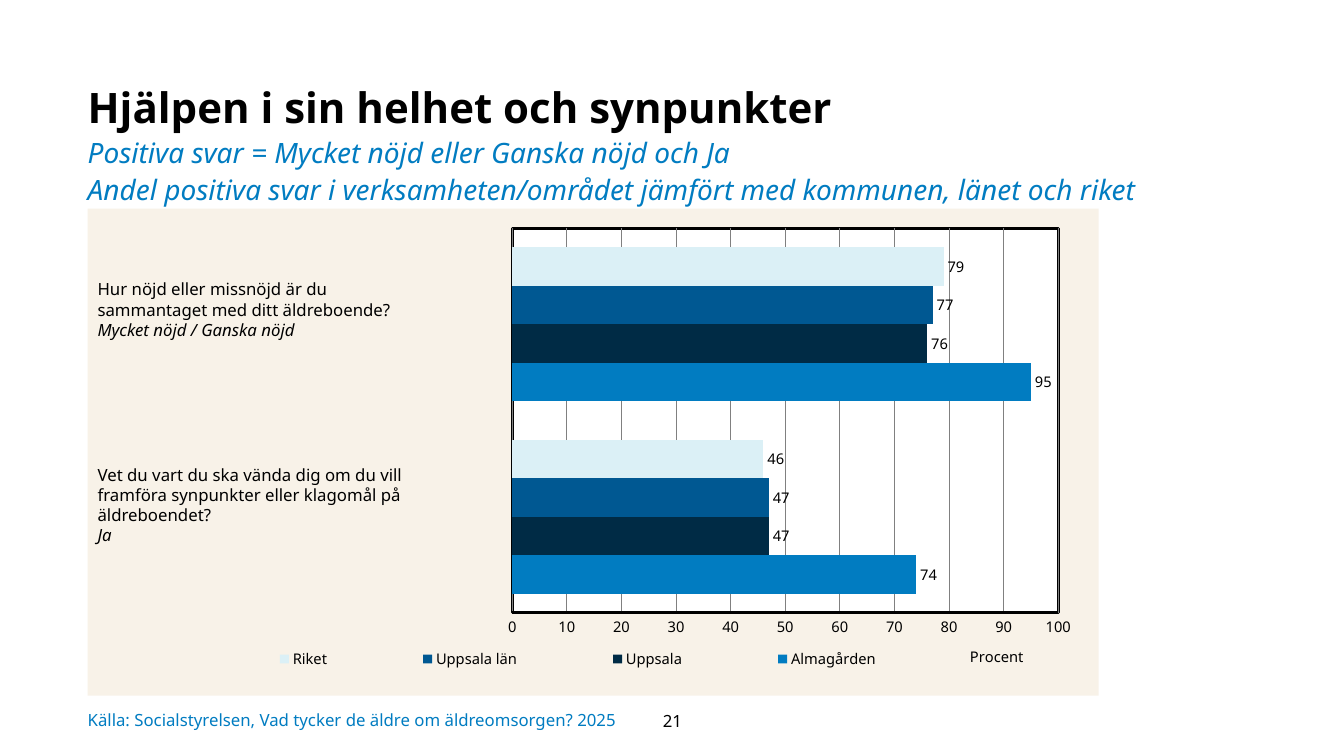
from dataclasses import dataclass

from pptx import Presentation
from pptx.chart.data import CategoryChartData
from pptx.dml.color import RGBColor
from pptx.enum.chart import XL_CHART_TYPE as ChartType
from pptx.enum.chart import XL_LABEL_POSITION as LabelPos
from pptx.enum.chart import XL_LEGEND_POSITION as LegendPos
from pptx.enum.chart import XL_TICK_MARK as TickMark
from pptx.enum.text import MSO_ANCHOR as Anchor
from pptx.enum.text import PP_ALIGN as Align
from pptx.oxml import parse_xml
from pptx.oxml.ns import nsdecls, qn
from pptx.util import Cm, Pt


@dataclass(frozen=True)
class Theme:
    font: str = "Noto Sans"
    ink: str = "000000"
    blue: str = "017CC1"
    navy: str = "002B45"
    mid_blue: str = "005892"
    pale_blue: str = "DBF0F6"
    sand: str = "F8F2E8"
    white: str = "FFFFFF"
    grid: str = "808080"
    heading: float = 30
    subheading: float = 20
    body: float = 12
    small: float = 10.5


THEME = Theme()
MARGIN = 2.21  # left edge shared by all regions, in cm

SERIES = [
    ("Almagården", (74, 95), THEME.blue),
    ("Uppsala", (47, 76), THEME.navy),
    ("Uppsala län", (47, 77), THEME.mid_blue),
    ("Riket", (46, 79), THEME.pale_blue),
]


def style(font, size, color=THEME.ink, bold=False, italic=False):
    font.name = THEME.font
    font.size = Pt(size)
    font.bold = bold
    font.italic = italic
    font.color.rgb = RGBColor.from_string(color)


def add_text(slide, box, lines, anchor=Anchor.TOP, inset=None):
    """Each line is (text, size, color, bold, italic), one paragraph per line."""
    frame = slide.shapes.add_textbox(*map(Cm, box)).text_frame
    frame.word_wrap = True
    frame.vertical_anchor = anchor
    if inset is not None:
        frame.margin_left = frame.margin_top = Cm(inset)
        frame.margin_right = frame.margin_bottom = Cm(inset)
    frame.text = "\n".join(text for text, *_ in lines)
    for paragraph, (_, *look) in zip(frame.paragraphs, lines):
        for run in paragraph.runs:
            style(run.font, *look)
    return frame


# Heading with its two explanatory lines
def add_heading(slide, box):
    sub = (THEME.subheading, THEME.blue, False, True)
    frame = add_text(slide, box, [
        ("Hjälpen i sin helhet och synpunkter", THEME.heading, THEME.ink, True, False),
        ("Positiva svar = Mycket nöjd eller Ganska nöjd och Ja", *sub),
        ("Andel positiva svar i verksamheten/området jämfört med "
         "kommunen, länet och riket", *sub),
    ], inset=0)
    for paragraph in frame.paragraphs:
        paragraph.line_spacing = 1.1


# Chart parts that need XML
def set_layout(parent, x, y, w=None, h=None, inner=False):
    target = '<c:layoutTarget val="inner"/>' if inner else ""
    modes = '<c:xMode val="edge"/><c:yMode val="edge"/>'
    sizes = "".join(f'<c:{tag} val="{value}"/>'
                    for tag, value in zip("xywh", (x, y, w, h)) if value is not None)
    layout = parse_xml(f'<c:layout {nsdecls("c")}><c:manualLayout>{target}{modes}{sizes}'
                       '</c:manualLayout></c:layout>')
    old = parent.find(qn("c:layout"))
    if old is not None:
        parent.remove(old)
    overlay = parent.find(qn("c:overlay"))
    if overlay is None:
        parent.insert(0, layout)
    else:
        overlay.addprevious(layout)


def area_fill(color, line):
    return parse_xml(f'<c:spPr {nsdecls("c", "a")}><a:solidFill><a:srgbClr val="{color}"/>'
                     f'</a:solidFill>{line}</c:spPr>')


def style_value_axis(axis):
    axis.minimum_scale, axis.maximum_scale, axis.major_unit = 0, 100, 10
    axis.major_tick_mark = axis.minor_tick_mark = TickMark.NONE
    axis.format.line.color.rgb = RGBColor.from_string(THEME.ink)
    axis.format.line.width = Pt(2)
    axis.major_gridlines.format.line.color.rgb = RGBColor.from_string(THEME.grid)
    axis.major_gridlines.format.line.width = Pt(0.75)
    style(axis.tick_labels.font, THEME.small)
    caption = axis.axis_title.text_frame
    caption.text = "Procent"
    style(caption.paragraphs[0].runs[0].font, THEME.small)
    set_layout(axis.axis_title._element, 0.87, 0.89)


def add_share_chart(slide, box):
    data = CategoryChartData()
    data.categories = ["1", "2"]
    for name, values, _ in SERIES:
        data.add_series(name, values)
    chart = slide.shapes.add_chart(ChartType.BAR_CLUSTERED, *map(Cm, box), data).chart
    style(chart.font, THEME.small)
    chart.has_title = False

    # Bars and value labels
    bars = chart.plots[0]
    bars.gap_width, bars.overlap, bars.vary_by_categories = 100, 0, False
    for series, (_, _, color) in zip(bars.series, SERIES):
        series.format.fill.solid()
        series.format.fill.fore_color.rgb = RGBColor.from_string(color)
        labels = series.data_labels
        labels.show_value = True
        labels.position = LabelPos.OUTSIDE_END
        style(labels.font, THEME.small)

    # Axes and legend
    chart.category_axis.visible = False
    style_value_axis(chart.value_axis)
    chart.has_legend = True
    legend = chart.legend
    legend.position = LegendPos.BOTTOM
    legend.include_in_layout = False
    style(legend.font, THEME.small)
    set_layout(legend._element, 0.1, 0.89, 0.77, 0.07)

    # Plot frame and backgrounds
    root = chart._chartSpace
    plot_area = root.chart.plotArea
    set_layout(plot_area, 0.42, 0.04, 0.54, 0.79, inner=True)
    plot_area.append(area_fill(
        THEME.white, f'<a:ln w="{Pt(2)}"><a:solidFill><a:srgbClr val="{THEME.ink}"/>'
                     '</a:solidFill></a:ln>'))
    root.chart.addnext(area_fill(THEME.sand, "<a:ln><a:noFill/></a:ln>"))


# Question beside its group of bars, with the positive answers in italics
def add_question(slide, box, lines, answer):
    look = (THEME.body, THEME.ink, False)
    add_text(slide, box, [(line, *look, False) for line in lines] + [(answer, *look, True)])


# Source line and page number
def add_footer(slide, box):
    left, top, width, height = box
    add_text(slide, box, [
        ("Källa: Socialstyrelsen, Vad tycker de äldre om äldreomsorgen? 2025",
         THEME.body, THEME.blue)], Anchor.MIDDLE, inset=0)
    number = add_text(slide, (left + width - 1.57, top - 0.13, 2.59, height + 0.28),
                      [("21", THEME.body)], Anchor.MIDDLE)
    number.paragraphs[0].alignment = Align.CENTER


def main():
    deck = Presentation()
    deck.slide_width, deck.slide_height = Cm(33.87), Cm(19.05)
    slide = deck.slides.add_slide(deck.slide_layouts[6])
    add_heading(slide, (MARGIN, 1.93, 27, 3))
    add_share_chart(slide, (MARGIN, 5.26, 25.48, 12.27))
    add_question(slide, (MARGIN, 6.91, 8.53, 2.24),
                 ["Hur nöjd eller missnöjd är du", "sammantaget med ditt äldreboende?"],
                 "Mycket nöjd / Ganska nöjd")
    add_question(slide, (MARGIN, 11.58, 8.53, 2.31),
                 ["Vet du vart du ska vända dig om du vill framföra synpunkter "
                  "eller klagomål på äldreboendet?"], "Ja")
    add_footer(slide, (MARGIN, 17.78, 15.01, 0.74))
    deck.save("out.pptx")


if __name__ == "__main__":
    main()
